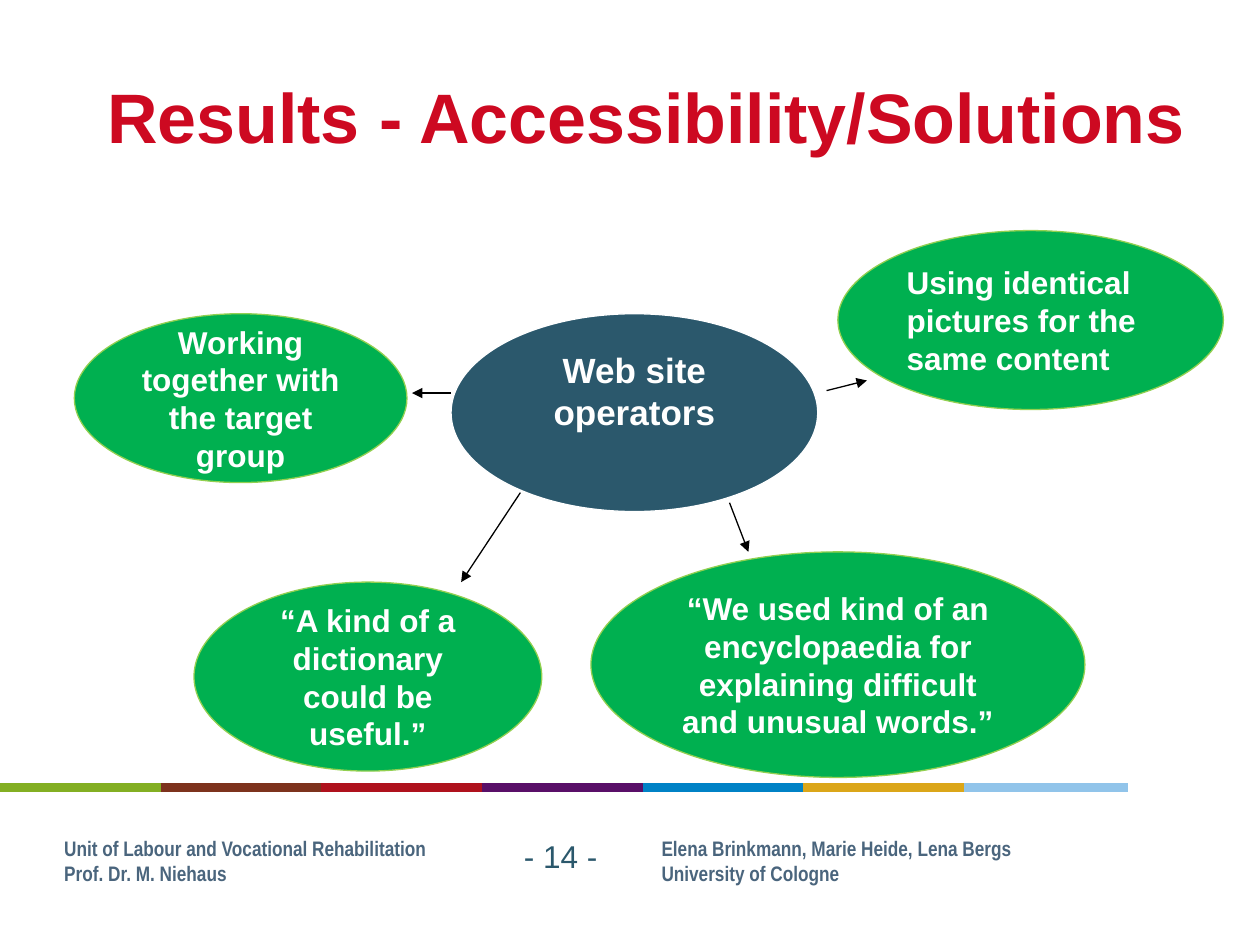
from dataclasses import dataclass

from lxml import etree
from pptx import Presentation
from pptx import util as u
from pptx.dml.color import RGBColor
from pptx.enum import shapes, text
from pptx.oxml.ns import qn


@dataclass(frozen=True)
class Theme:
    """Colours, fonts and type sizes of the slide."""
    red: str = "CD0921"
    navy: str = "2B586C"
    slate: str = "4A657D"
    green: str = "00B050"
    lime: str = "92D050"
    white: str = "FFFFFF"
    black: str = "000000"
    band: tuple = ("83AF23", "7D321D", "AF111D", "590F68", "0082C6", "DBA619", "91C4EA")
    font: str = "Arial"
    narrow: str = "Arial Narrow"
    title: int = 40
    hub: int = 20
    body: int = 18
    footer: int = 12
    hairline: float = 0.75
    band_width: float = 5.5


@dataclass(frozen=True)
class Box:
    """A region in cells of a grid of 100 columns by 75 rows."""
    x: float
    y: float
    w: float
    h: float

    def sub(self, x, y, w, h):
        """Return a box placed relative to this one."""
        return Box(self.x + x, self.y + y, w, h)

    def lengths(self):
        """Return left, top, width and height as slide lengths."""
        return [round(n * CELL) for n in (self.x, self.y, self.w, self.h)]


THEME = Theme()
SLIDE_WIDTH, SLIDE_HEIGHT = u.Inches(10), u.Inches(7.5)
CELL = SLIDE_WIDTH / 100
LEFT, CENTER = text.PP_ALIGN.LEFT, text.PP_ALIGN.CENTER
TOP, MIDDLE = text.MSO_ANCHOR.TOP, text.MSO_ANCHOR.MIDDLE


def write(frame, *lines, size=THEME.body, color=THEME.white, font=THEME.font,
          bold=True, align=LEFT, anchor=TOP, wrap=True):
    """Fill a text frame with one paragraph per line."""
    frame.word_wrap = wrap
    frame.vertical_anchor = anchor
    for index, line in enumerate(lines):
        paragraph = frame.add_paragraph() if index else frame.paragraphs[0]
        paragraph.alignment = align
        run = paragraph.add_run()
        run.text = line
        run.font.size = u.Pt(size)
        run.font.name = font
        run.font.bold = bold
        run.font.color.rgb = RGBColor.from_string(color)


def add_shape(slide, kind, box, fill, outline=None):
    """Add a flat preset shape."""
    shape = slide.shapes.add_shape(kind, *box.lengths())
    shape.shadow.inherit = False
    shape.fill.solid()
    shape.fill.fore_color.rgb = RGBColor.from_string(fill)
    if outline:
        shape.line.color.rgb = RGBColor.from_string(outline)
        shape.line.width = u.Pt(THEME.hairline)
    else:
        shape.line.fill.background()
    return shape


def add_line(slide, box, color, width, arrow=False):
    """Draw a straight line across a box, from its origin to its far corner."""
    left, top, across, down = box.lengths()
    line = slide.shapes.add_connector(
        shapes.MSO_CONNECTOR.STRAIGHT, left, top, left + across, top + down)
    line.line.color.rgb = RGBColor.from_string(color)
    line.line.width = u.Pt(width)
    properties = line._element.spPr
    if arrow:
        etree.SubElement(properties.find(qn("a:ln")), qn("a:tailEnd"), type="triangle")
    etree.SubElement(properties, qn("a:effectLst"))


def add_title(slide, box):
    """Place the slide title in its placeholder."""
    title = slide.shapes.title
    title.left, title.top, title.width, title.height = box.lengths()
    write(title.text_frame, "Results - Accessibility/Solutions",
          size=THEME.title, color=THEME.red, anchor=MIDDLE)


def add_solution_map(slide, box):
    """Place the operators in the middle, with arrows to their solutions."""
    hub = add_shape(slide, shapes.MSO_SHAPE.OVAL, box.sub(29.9, 6.6, 29.1, 15.7),
                    THEME.navy, THEME.white)
    write(hub.text_frame, "Web site operators", size=THEME.hub, align=CENTER)

    solutions = (
        ("Working together with the target group",
         (0, 6.6, 26.4, 13.4), (29.9, 12.9, -3.1, 0), CENTER),
        ("“We used kind of an encyclopaedia for explaining difficult and unusual words.”",
         (41, 25.5, 39.2, 17.9), (52, 21.6, 1.5, 3.9), CENTER),
        ("“A kind of a dictionary could be useful.”",
         (9.5, 27.9, 27.6, 15), (35.4, 20.8, -4.7, 7.1), CENTER),
        ("Using identical pictures for the same content",
         (60.6, 0, 30.6, 14.2), (59.7, 12.7, 3.2, -0.8), LEFT),
    )
    for wording, place, arrow, align in solutions:
        bubble = add_shape(slide, shapes.MSO_SHAPE.OVAL, box.sub(*place),
                           THEME.green, THEME.lime)
        write(bubble.text_frame, wording, align=align, anchor=MIDDLE)
        add_line(slide, box.sub(*arrow), THEME.black, THEME.hairline, arrow=True)


def add_band(slide, box):
    """Draw the row of coloured segments across a box."""
    segment = 13
    step = (box.w - segment) / (len(THEME.band) - 1)
    for index, color in enumerate(THEME.band):
        add_line(slide, box.sub(index * step, 0, segment, 0), color, THEME.band_width)


def add_footer(slide, box):
    """Place the two credits and the page number between them."""
    credits = (
        (0, "Unit of Labour and Vocational Rehabilitation", "Prof. Dr. M. Niehaus"),
        (47.4, "Elena Brinkmann, Marie Heide, Lena Bergs", "University of Cologne"),
    )
    for offset, *lines in credits:
        credit = add_shape(slide, shapes.MSO_SHAPE.RECTANGLE,
                           box.sub(offset, 0, 15.8, box.h), THEME.white)
        credit.text_frame.margin_left = 0
        write(credit.text_frame, *lines, size=THEME.footer, color=THEME.slate,
              font=THEME.narrow, wrap=False)
    page = slide.shapes.add_textbox(*box.sub(35.5, 0.1, 11, 4).lengths())
    write(page.text_frame, "- 14 -", color=THEME.navy, bold=False)


def main():
    """Build the slide and save it."""
    deck = Presentation()
    deck.slide_width, deck.slide_height = SLIDE_WIDTH, SLIDE_HEIGHT
    slide = deck.slides.add_slide(deck.slide_layouts[5])
    add_band(slide, Box(0, 62.5, 89.5, 0))
    add_footer(slide, Box(5.1, 65.8, 84.4, 5))
    add_title(slide, Box(7.5, 2.9, 89.7, 12.5))
    add_solution_map(slide, Box(5.9, 18.3, 91.2, 43.4))
    deck.save("out.pptx")


if __name__ == "__main__":
    main()
